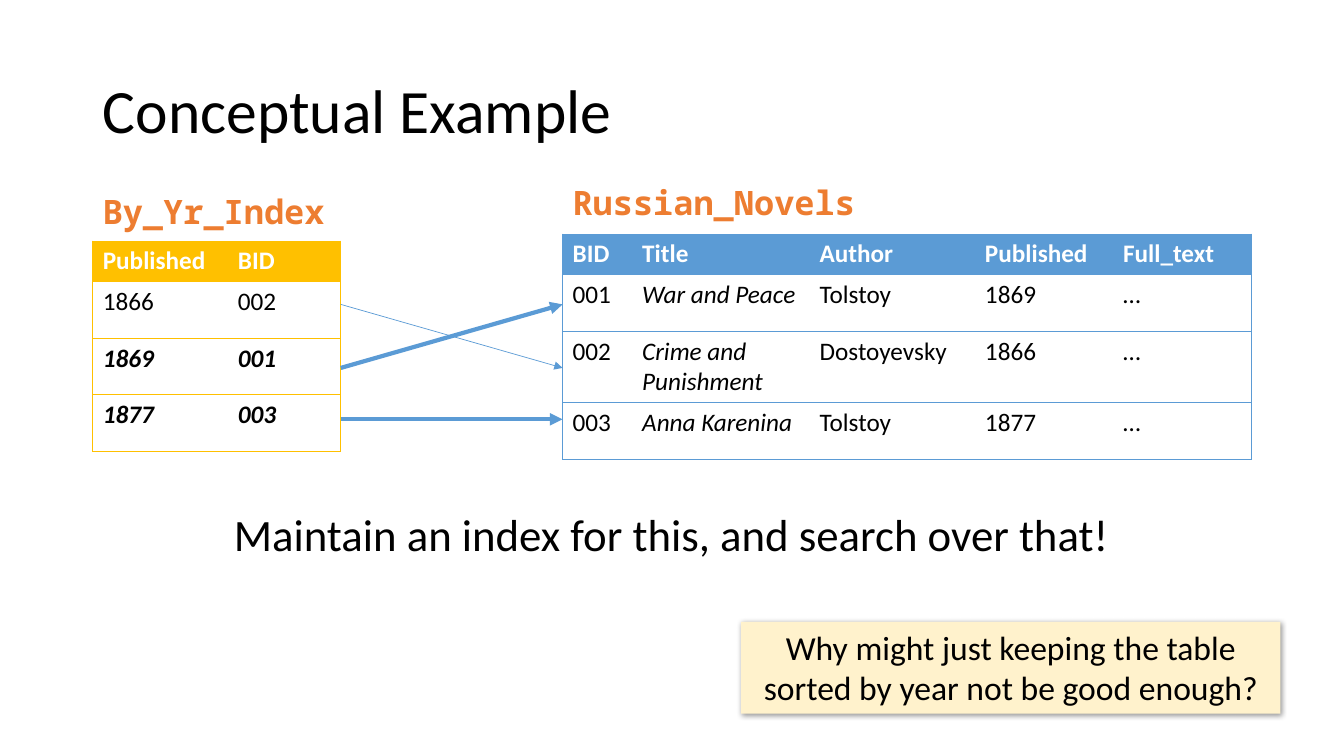
from dataclasses import dataclass

from lxml import etree
from pptx import Presentation
from pptx import util as u
from pptx.dml.color import RGBColor
from pptx.enum import shapes, text
from pptx.oxml import parse_xml
from pptx.oxml.ns import nsdecls, qn

PX = 9144  # 100 px to the inch
BLACK = RGBColor(0x00, 0x00, 0x00)
WHITE = RGBColor(0xFF, 0xFF, 0xFF)
BLUE = RGBColor(0x5B, 0x9B, 0xD5)
GOLD = RGBColor(0xFF, 0xC0, 0x00)
ORANGE = RGBColor(0xED, 0x7D, 0x31)
CREAM = RGBColor(0xFF, 0xF2, 0xCC)
SANS = "Calibri"
MONO = "Noto Sans Mono"
PLAIN = "{2D5ABB26-0587-4C30-8999-92F81FD0307C}"  # no style, no grid
ROWS = (33, 56, 56, 56)


@dataclass(frozen=True)
class Grid:
    left: int
    top: int
    cols: tuple[int, ...]
    color: RGBColor
    cells: tuple[tuple[str, ...], ...]
    bold: tuple[int, ...] = ()
    slant_rows: tuple[int, ...] = ()
    slant_cols: tuple[int, ...] = ()


@dataclass(frozen=True)
class Label:
    words: str
    box: tuple[int, int, int, int]
    size: int
    font: str = SANS
    color: RGBColor = BLACK
    bold: bool = False
    wrap: bool = True


@dataclass(frozen=True)
class Arrow:
    start: int
    end: int
    width: float


GRIDS = (
    Grid(558, 232, (69, 176, 164, 137, 137), BLUE, (
        ("BID", "Title", "Author", "Published", "Full_text"),
        ("001", "War and Peace", "Tolstoy", "1869", "…"),
        ("002", "Crime and Punishment", "Dostoyevsky", "1866", "…"),
        ("003", "Anna Karenina", "Tolstoy", "1877", "…"),
    ), slant_cols=(1,)),
    Grid(92, 239, (134, 112), GOLD, (
        ("Published", "BID"),
        ("1866", "002"),
        ("1869", "001"),
        ("1877", "003"),
    ), bold=(2, 3), slant_rows=(2, 3)),
)
ARROWS = (Arrow(302, 365, 0.5), Arrow(365, 302, 3), Arrow(416, 416, 3))
LABELS = (
    Label("Maintain an index for this, and search over that!",
          (222, 498, 889, 64), 32),
    Label("Russian_Novels", (558, 176, 305, 50), 24, MONO, ORANGE, True, False),
    Label("By_Yr_Index", (92, 184, 244, 50), 24, MONO, ORANGE, True, False),
)


def scale(*nums: int) -> list[u.Emu]:
    return [u.Emu(num * PX) for num in nums]


def style(para, size: int, font: str = SANS, color: RGBColor = BLACK,
          bold: bool = False, slant: bool = False) -> None:
    para.font.size = u.Pt(size)
    para.font.name = font
    para.font.color.rgb = color
    para.font.bold = bold
    para.font.italic = slant


def edge(cell, sides: str, color: RGBColor) -> None:
    """Draw half-point borders; sides come in the order L, R, T, B."""
    props = cell._tc.get_or_add_tcPr()
    for pos, side in enumerate(sides):
        props.insert(pos, parse_xml(
            f'<a:ln{side} {nsdecls("a")} w="6350"><a:solidFill>'
            f'<a:srgbClr val="{color}"/></a:solidFill></a:ln{side}>'))


def add_grid(slide, grid: Grid) -> None:
    frame = slide.shapes.add_table(
        len(ROWS), len(grid.cols),
        *scale(grid.left, grid.top, sum(grid.cols), sum(ROWS)))
    table = frame.table
    table.horz_banding = False
    table._tbl.tblPr.find(qn("a:tableStyleId")).text = PLAIN
    for col, width in zip(table.columns, scale(*grid.cols)):
        col.width = width
    for row, height in zip(table.rows, scale(*ROWS)):
        row.height = height
    last = len(grid.cols) - 1
    for r, line in enumerate(grid.cells):
        for c, words in enumerate(line):
            cell = table.cell(r, c)
            cell.text = words
            head = r == 0
            slant = not head and (r in grid.slant_rows or c in grid.slant_cols)
            style(cell.text_frame.paragraphs[0], 18,
                  color=WHITE if head else BLACK,
                  bold=head or r in grid.bold, slant=slant)
            if head:
                cell.fill.solid()
                cell.fill.fore_color.rgb = grid.color
            else:
                cell.fill.background()
            sides = ("L" if c == 0 else "") + ("R" if c == last else "")
            edge(cell, sides + "TB", grid.color)


def add_arrow(slide, arrow: Arrow) -> None:
    line = slide.shapes.add_connector(
        shapes.MSO_CONNECTOR.STRAIGHT,
        *scale(338, arrow.start, 558, arrow.end))
    line.line.color.rgb = BLUE
    line.line.width = u.Pt(arrow.width)
    etree.SubElement(line.line._get_or_add_ln(), qn("a:tailEnd"),
                     type="triangle")
    etree.SubElement(line._element.spPr, qn("a:effectLst"))


def add_label(slide, label: Label) -> None:
    frame = slide.shapes.add_textbox(*scale(*label.box)).text_frame
    frame.word_wrap = label.wrap
    frame.auto_size = text.MSO_AUTO_SIZE.SHAPE_TO_FIT_TEXT
    frame.text = label.words
    style(frame.paragraphs[0], label.size, label.font, label.color, label.bold)


def add_note(slide) -> None:
    note = slide.shapes.add_shape(shapes.MSO_SHAPE.RECTANGLE,
                                  *scale(735, 617, 535, 91))
    note.fill.solid()
    note.fill.fore_color.rgb = CREAM
    note.line.fill.background()
    note._element.spPr.append(parse_xml(
        f'<a:effectLst {nsdecls("a")}><a:outerShdw blurRad="50800" '
        'dist="12700" dir="2700000" algn="tl" rotWithShape="0">'
        '<a:srgbClr val="000000"><a:alpha val="40000"/></a:srgbClr>'
        '</a:outerShdw></a:effectLst>'))
    frame = note.text_frame
    frame.word_wrap = True
    frame.vertical_anchor = text.MSO_ANCHOR.TOP
    frame.auto_size = text.MSO_AUTO_SIZE.SHAPE_TO_FIT_TEXT
    frame.text = ("Why might just keeping the table sorted by year "
                  "not be good enough?")
    para = frame.paragraphs[0]
    para.alignment = text.PP_ALIGN.CENTER
    style(para, 24)


def set_title(slide) -> None:
    title = slide.shapes.title
    title.left, title.top, title.width, title.height = scale(92, 40, 1150, 145)
    title.text_frame.text = "Conceptual Example"
    title.text_frame.vertical_anchor = text.MSO_ANCHOR.MIDDLE
    para = title.text_frame.paragraphs[0]
    para.alignment = text.PP_ALIGN.LEFT
    para.line_spacing = 0.9
    style(para, 44)


def main() -> None:
    deck = Presentation()
    deck.slide_width, deck.slide_height = scale(1333, 750)
    slide = deck.slides.add_slide(deck.slide_layouts[5])
    set_title(slide)
    for grid in GRIDS:
        add_grid(slide, grid)
    for arrow in ARROWS:
        add_arrow(slide, arrow)
    for label in LABELS:
        add_label(slide, label)
    add_note(slide)
    deck.save("out.pptx")


if __name__ == "__main__":
    main()
